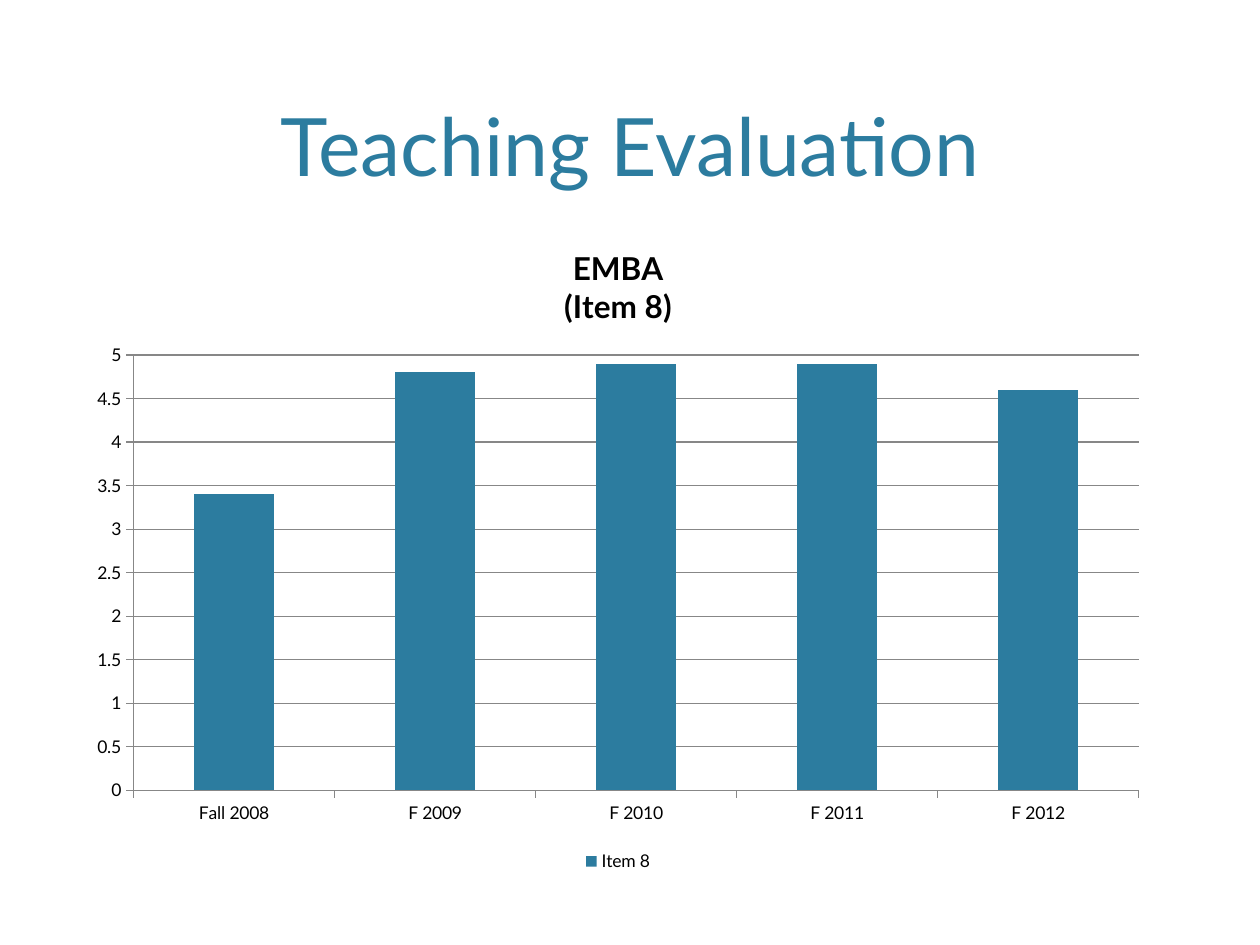
import pptx
import pptx.util
import pptx.chart.data
import pptx.dml.color
import pptx.enum.chart
import pptx.enum.text

Inches = pptx.util.Inches
HEADING = "Teaching Evaluation"
CHART_HEADING = ["EMBA", "(Item 8)"]
SERIES_NAME = "Item 8"
SCORES = {"Fall 2008": 3.4, "F 2009": 4.8, "F 2010": 4.9, "F 2011": 4.9, "F 2012": 4.6}
COLOURS = {"accent": "2C7C9F", "text": "000000", "line": "878787"}
FONT = "Lato"


def rgb(name):
    return pptx.dml.color.RGBColor.from_string(COLOURS[name])


def style_font(font, size, colour="text", bold=False):
    font.name, font.size, font.bold = FONT, pptx.util.Pt(size), bold
    font.color.rgb = rgb(colour)


def write_text(frame, lines, **font_format):
    for index, line in enumerate(lines):
        paragraph = frame.add_paragraph() if index else frame.paragraphs[0]
        paragraph.alignment = pptx.enum.text.PP_ALIGN.CENTER
        run = paragraph.add_run()
        run.text = line
        style_font(run.font, **font_format)


def style_line(line):
    line.color.rgb = rgb("line")
    line.width = pptx.util.Pt(0.75)


def add_heading(slide):
    heading = slide.shapes.title
    heading.left, heading.top = Inches(0.6), Inches(0.12)
    heading.width, heading.height = Inches(8.8), Inches(1.46)
    heading.text_frame.vertical_anchor = pptx.enum.text.MSO_ANCHOR.BOTTOM
    write_text(heading.text_frame, [HEADING], size=46, colour="accent")


def add_scores(slide):
    data = pptx.chart.data.CategoryChartData()
    data.categories = list(SCORES)
    data.add_series(SERIES_NAME, list(SCORES.values()))
    chart = slide.shapes.add_chart(
        pptx.enum.chart.XL_CHART_TYPE.COLUMN_CLUSTERED,
        Inches(0.6), Inches(1.77), Inches(8.61), Inches(5.19), data).chart
    style_font(chart.font, 10)
    chart.has_title = True
    write_text(chart.chart_title.text_frame, CHART_HEADING, size=18, bold=True)
    chart.chart_title.include_in_layout = False

    chart.has_legend = True
    chart.legend.position = pptx.enum.chart.XL_LEGEND_POSITION.BOTTOM
    chart.legend.include_in_layout = False

    plot = chart.plots[0]
    plot.gap_width = 150
    plot.vary_by_categories = False
    columns = plot.series[0]
    columns.format.fill.solid()
    columns.format.fill.fore_color.rgb = rgb("accent")

    scale = chart.value_axis
    scale.minimum_scale, scale.maximum_scale, scale.major_unit = 0, 5, 0.5
    scale.tick_labels.number_format = "General"
    scale.tick_labels.number_format_is_linked = False
    scale.has_major_gridlines = True
    style_line(scale.major_gridlines.format.line)
    for axis in (chart.category_axis, scale):
        axis.major_tick_mark = pptx.enum.chart.XL_TICK_MARK.OUTSIDE
        style_line(axis.format.line)


def main():
    """Build the teaching evaluation slide."""
    deck = pptx.Presentation()
    deck.slide_width, deck.slide_height = Inches(10), Inches(7.5)
    slide = deck.slides.add_slide(deck.slide_layouts[5])
    add_heading(slide)
    add_scores(slide)
    deck.save("out.pptx")


if __name__ == "__main__":
    main()
